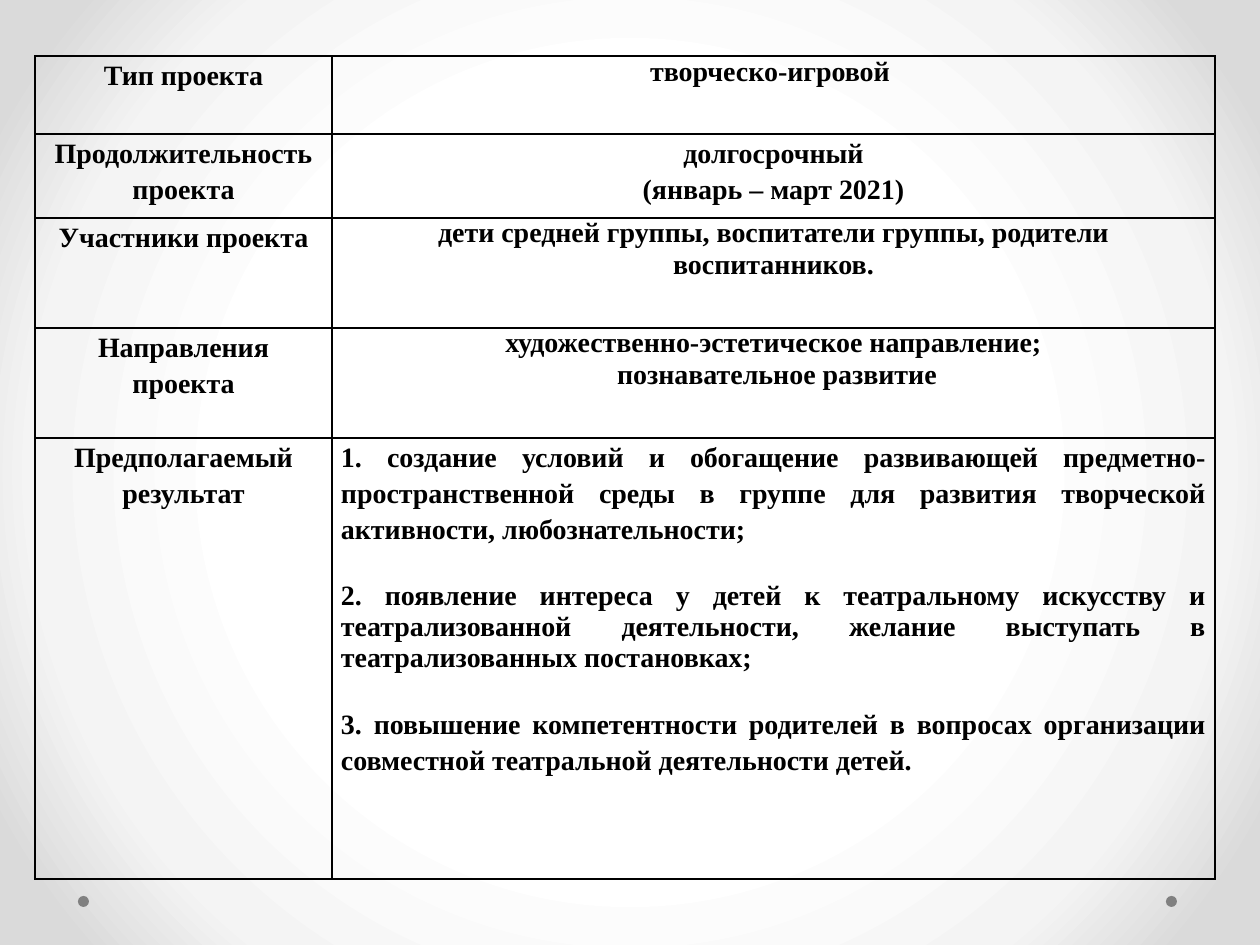
from typing import NamedTuple

from lxml import etree
from pptx import Presentation
from pptx import util as u
from pptx.dml.color import RGBColor
from pptx.enum import shapes, text
from pptx.oxml import parse_xml
from pptx.oxml.ns import nsdecls, qn

SCALE = 914400 / 126
MID = text.PP_ALIGN.CENTER
FULL = text.PP_ALIGN.JUSTIFY


class Para(NamedTuple):
    words: str
    lead: float = 1.15
    align: int = MID
    gap: int = 0


class Row(NamedTuple):
    high: int
    head: str
    body: list[Para]


class Dot(NamedTuple):
    left: int
    top: int
    size: int = 11


ROWS = [
    Row(78, "Тип проекта", [Para("творческо-игровой ", 1.0)]),
    Row(84, "Продолжительность проекта", [
        Para("долгосрочный"),
        Para("(январь – март 2021)"),
    ]),
    Row(110, "Участники проекта", [
        Para("дети средней группы, воспитатели группы, родители воспитанников.", 1.0),
    ]),
    Row(110, "Направления проекта", [
        Para("художественно-эстетическое направление;", 1.0),
        Para(" познавательное развитие", 1.0),
    ]),
    Row(441, "Предполагаемый результат", [
        Para("1. создание условий и обогащение развивающей "
             "предметно-пространственной среды в группе для развития "
             "творческой активности, любознательности;", 1.15, FULL),
        Para("2. появление интереса у детей к театральному искусству и "
             "театрализованной деятельности, желание выступать в "
             "театрализованных постановках; ", 1.0, FULL, 20),
        Para("3. повышение компетентности родителей в вопросах организации "
             "совместной театральной деятельности детей. ", 1.15, FULL, 18),
    ]),
]
COLS = [297, 883]
DOTS = [Dot(1166, 896), Dot(78, 896)]
STOPS = [(50, "FFFFFF"), (76, "F4F4F4"), (92, "DADADA")]


def px(n: int) -> u.Emu:
    return u.Emu(round(n * SCALE))


def tint(code: str) -> RGBColor:
    return RGBColor.from_string(code)


def put(item, vals: dict) -> None:
    for name, val in vals.items():
        setattr(item, name, val)


def paint(slide) -> None:
    fill = slide.background.fill
    fill.gradient()
    old = slide.element.find(".//" + qn("a:gradFill"))
    stops = "".join(
        f'<a:gs pos="{pos * 1000}"><a:srgbClr val="{code}"/></a:gs>'
        for pos, code in STOPS
    )
    new = parse_xml(
        f'<a:gradFill {nsdecls("a")} rotWithShape="1"><a:gsLst>{stops}</a:gsLst>'
        '<a:path path="circle"><a:fillToRect l="50000" t="50000" r="50000" b="50000"/>'
        '</a:path></a:gradFill>'
    )
    old.getparent().replace(old, new)


def spot(slide, dot: Dot) -> None:
    oval = slide.shapes.add_shape(
        shapes.MSO_SHAPE.OVAL, *map(px, (dot.left, dot.top, dot.size, dot.size)))
    oval.shadow.inherit = False
    oval.fill.solid()
    oval.fill.fore_color.rgb = tint("808080")
    oval.line.fill.background()


def frame(cell, code: str) -> None:
    props = cell._tc.get_or_add_tcPr()
    for side in ("lnL", "lnR", "lnT", "lnB"):
        line = etree.SubElement(props, qn(f"a:{side}"), w=str(u.Pt(1)))
        fill = etree.SubElement(line, qn("a:solidFill"))
        etree.SubElement(fill, qn("a:srgbClr"), val=code)


def write(cell, paras: list[Para]) -> None:
    frame(cell, "000000")
    cell.fill.background()
    put(cell, {"margin_left": px(9), "margin_right": px(9),
               "margin_top": 0, "margin_bottom": 0})
    for i, para in enumerate(paras):
        part = cell.text_frame.add_paragraph() if i else cell.text_frame.paragraphs[0]
        put(part, {"alignment": para.align, "line_spacing": para.lead,
                   "space_before": u.Pt(para.gap)})
        run = part.add_run()
        run.text = para.words
        put(run.font, {"name": "Times New Roman", "size": u.Pt(16), "bold": True})
        run.font.color.rgb = tint("000000")


def chart(slide, rows: list[Row]) -> None:
    size = sum(COLS), sum(row.high for row in rows)
    grid = slide.shapes.add_table(
        len(rows), len(COLS), *map(px, (35, 56, *size))).table
    put(grid, {"first_row": False, "horz_banding": False})
    for col, wide in zip(grid.columns, COLS):
        col.width = px(wide)
    for i, row in enumerate(rows):
        grid.rows[i].height = px(row.high)
        write(grid.cell(i, 0), [Para(row.head)])
        write(grid.cell(i, 1), row.body)


def main() -> None:
    deck = Presentation()
    put(deck, {"slide_width": px(1260), "slide_height": px(945)})
    slide = deck.slides.add_slide(deck.slide_layouts[6])
    paint(slide)
    for dot in DOTS:
        spot(slide, dot)
    chart(slide, ROWS)
    deck.save("out.pptx")


if __name__ == "__main__":
    main()
